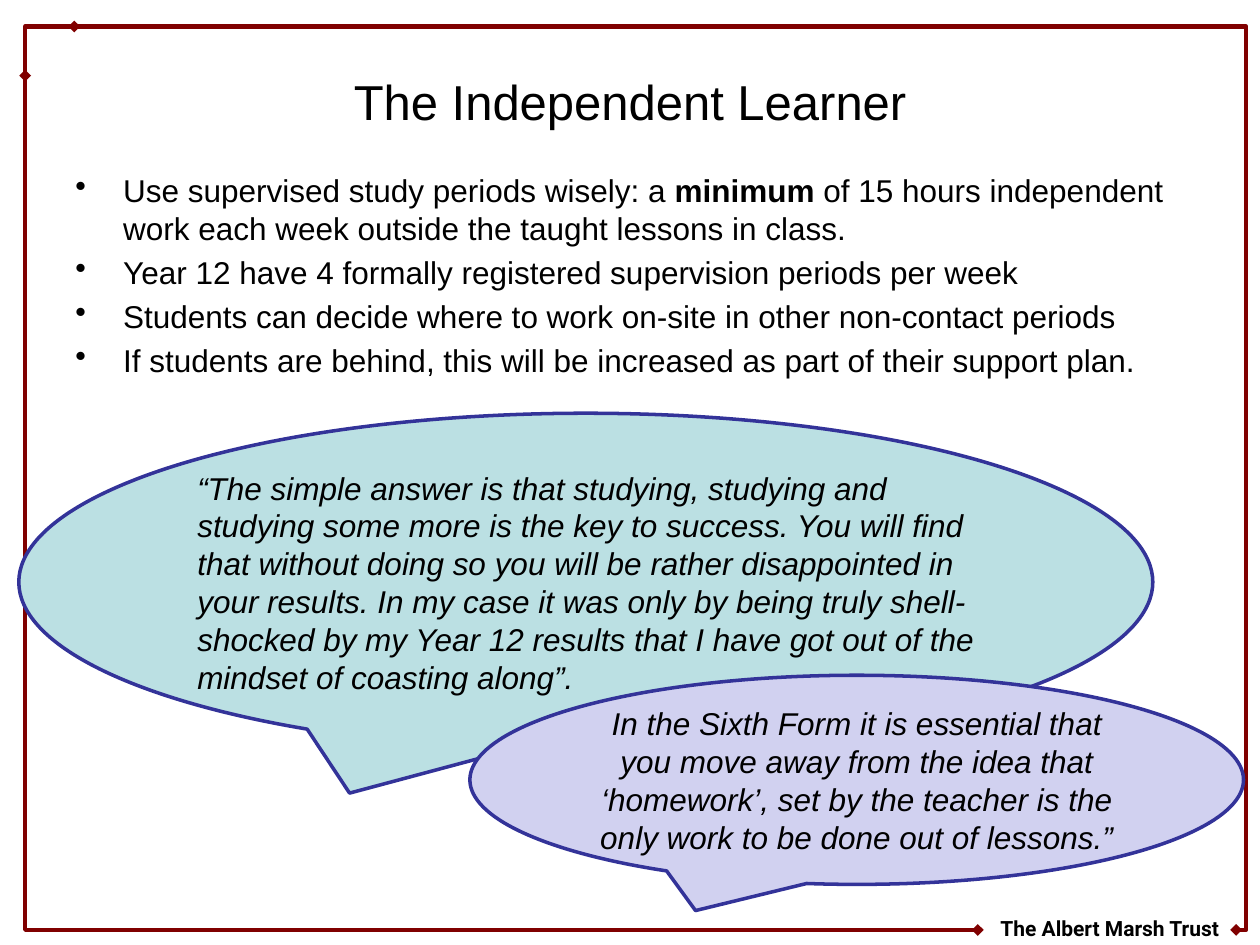
from lxml.etree import SubElement
from pptx import Presentation
from pptx.dml.color import RGBColor
from pptx.enum.shapes import MSO_CONNECTOR as Line, MSO_SHAPE as Shape
from pptx.enum.text import MSO_ANCHOR as Anchor, PP_ALIGN as Align
from pptx.oxml.ns import qn
from pptx.util import Inches, Pt

COLORS = {"frame": "800000", "paper": "FFFFFF", "ink": "000000",
          "edge": "333399", "teal": "BBE0E3", "lilac": "D1D1F0"}
BODY = {"name": "Arial", "size": Pt(18)}
QUOTE = {**BODY, "italic": True}
HEAD = {"name": "Arial", "size": Pt(28)}
BRAND = {"name": "Roboto", "size": Pt(12), "bold": True}

POINTS = [
    [("Use supervised study periods wisely: a ", False), ("minimum", True),
     (" of 15 hours independent work each week outside the taught lessons in class.", False)],
    [("Year 12 have 4 formally registered supervision periods per week", False)],
    [("Students can decide where to work on-site in other non-contact periods", False)],
    [("If students are behind, this will be increased as part of their support plan.", False)],
]
QUOTES = [
    ((0.15, 3.28, 9, 2.68), "teal", Align.LEFT,
     "“The simple answer is that studying, studying and studying some more is the key to "
     "success. You will find that without doing so you will be rather disappointed in your "
     "results. In my case it was only by being truly shell-shocked by my Year 12 results "
     "that I have got out of the mindset of coasting along”."),
    ((3.73, 5.36, 6.14, 1.66), "lilac", Align.CENTER,
     "In the Sixth Form it is essential that you move away from the idea that ‘homework’, "
     "set by the teacher is the only work to be done out of lessons.”"),
]


def rgb(name):
    """Return the named colour."""
    return RGBColor.from_string(COLORS[name])


def style(font, form):
    """Apply a dict of format values to a font in ink colour."""
    for key, value in form.items():
        setattr(font, key, value)
    font.color.rgb = rgb("ink")


def add_form(slide, kind, box, fill=None, edge=None, width=2):
    """Add a flat preset shape with an optional fill and edge."""
    shape = slide.shapes.add_shape(kind, *map(Inches, box))
    shape.shadow.inherit = False
    if fill:
        shape.fill.solid()
        shape.fill.fore_color.rgb = rgb(fill)
    else:
        shape.fill.background()
    if edge:
        shape.line.color.rgb = rgb(edge)
        shape.line.width = Pt(width)
    else:
        shape.line.fill.background()
    return shape


def add_text(slide, box):
    """Add a wrapping text box and return its frame."""
    frame = slide.shapes.add_textbox(*map(Inches, box)).text_frame
    frame.word_wrap = True
    return frame


def add_tick(slide, start, end):
    """Add a short frame line that ends in a diamond."""
    tick = slide.shapes.add_connector(Line.STRAIGHT, *map(Inches, start + end))
    tick.line.color.rgb = rgb("frame")
    tick.line.width = Pt(2.25)
    SubElement(tick.line._get_or_add_ln(), qn("a:tailEnd"), type="diamond")
    SubElement(tick._element.spPr, qn("a:effectLst"))


def add_frame(slide, box):
    """Draw the border, its diamonds and the name set into its lower edge."""
    left, top, width, height = box
    right, base = left + width, top + height
    gap, step = right - 2.13, 0.08
    add_form(slide, Shape.RECTANGLE, box, edge="frame", width=2.5)
    label = (gap, base - 0.16, 2.05, 0.28)
    add_form(slide, Shape.RECTANGLE, label, fill="paper")
    frame = add_text(slide, label)
    frame.margin_left = Inches(0.18)
    para = frame.paragraphs[0]
    para.text = "The Albert Marsh Trust"
    style(para.font, BRAND)
    for start, end in [
        ((left, top + 0.47), (left, top + 0.39)),
        ((left + 0.47, top), (left + 0.39, top)),
        ((right, base), (right - step, base)),
        ((gap - step, base), (gap, base)),
    ]:
        add_tick(slide, start, end)


def add_title(slide, box, text):
    """Place and format the title."""
    title = slide.shapes.title
    title.left, title.top, title.width, title.height = map(Inches, box)
    frame = title.text_frame
    frame.vertical_anchor = Anchor.MIDDLE
    para = frame.paragraphs[0]
    para.text = text
    para.alignment = Align.CENTER
    style(para.font, HEAD)


def add_points(slide, box, points):
    """Write the bulleted points."""
    frame = add_text(slide, box)
    for i, runs in enumerate(points):
        para = frame.add_paragraph() if i else frame.paragraphs[0]
        props = para._p.get_or_add_pPr()
        props.set("marL", str(Inches(0.38)))
        props.set("indent", str(Inches(-0.38)))
        SubElement(props, qn("a:buChar"), char="•")
        para.space_before = Pt(3.6 if i else 0)
        for text, bold in runs:
            run = para.add_run()
            run.text = text
            style(run.font, {**BODY, "bold": bold})


def add_quote(slide, box, fill, align, text):
    """Draw an oval speech bubble with a quote."""
    shape = add_form(slide, Shape.OVAL_CALLOUT, box, fill, "edge")
    frame = shape.text_frame
    frame.word_wrap = True
    frame.vertical_anchor = Anchor.MIDDLE
    para = frame.paragraphs[0]
    para.alignment = align
    run = para.add_run()
    run.text = text
    style(run.font, QUOTE)


def main():
    """Build and save the slide."""
    deck = Presentation()
    deck.slide_width, deck.slide_height = Inches(10), Inches(7.5)
    slide = deck.slides.add_slide(deck.slide_layouts[5])
    add_frame(slide, (0.2, 0.21, 9.69, 7.17))
    add_title(slide, (0.5, 0.3, 9, 1.01), "The Independent Learner")
    add_points(slide, (0.5, 1.31, 9, 1.57), POINTS)
    for quote in QUOTES:
        add_quote(slide, *quote)
    deck.save("out.pptx")


if __name__ == "__main__":
    main()
